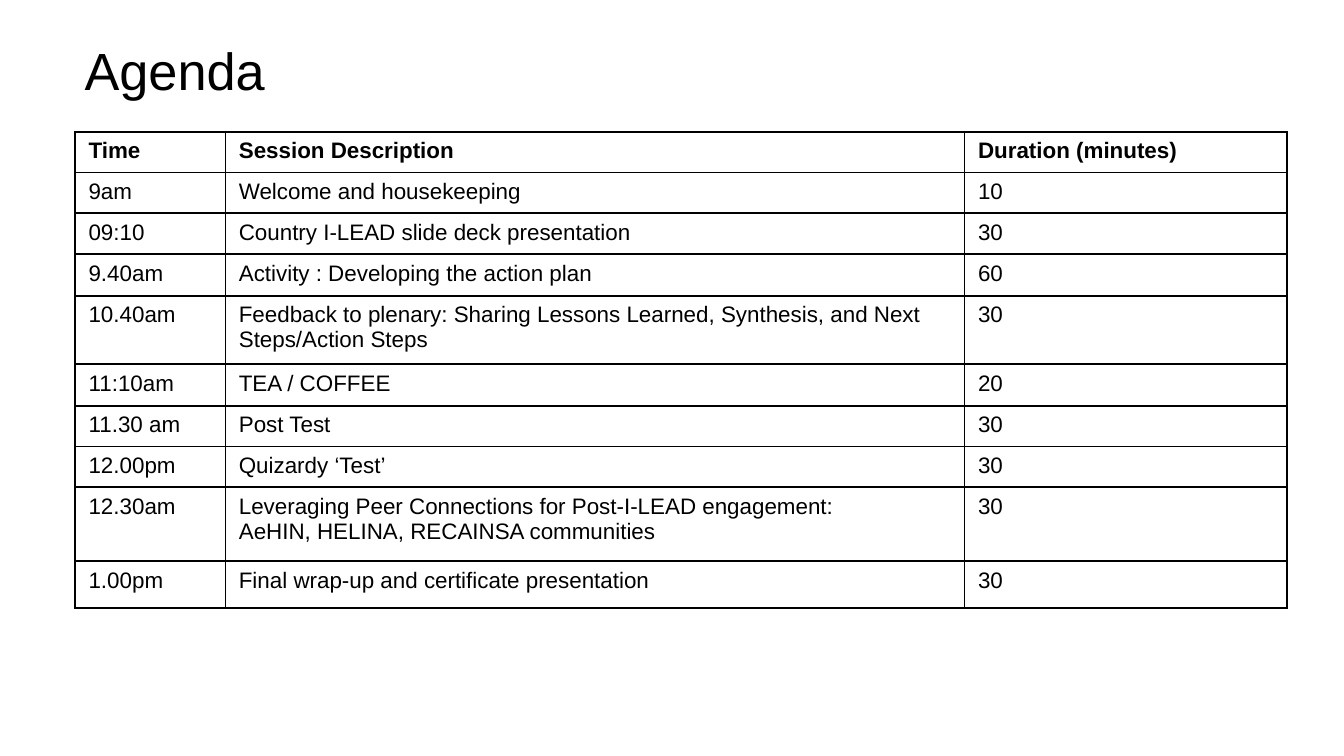
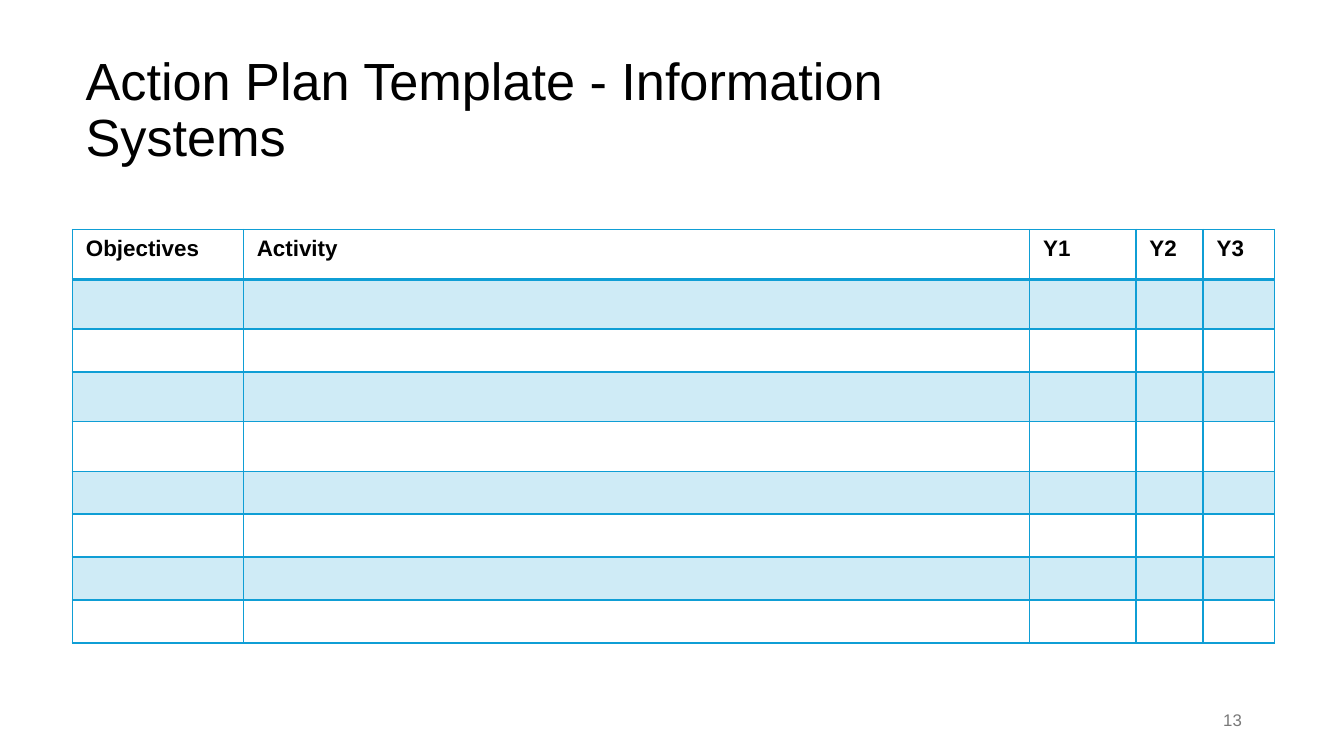
from dataclasses import dataclass
from typing import NamedTuple

from lxml import etree
from pptx import Presentation
from pptx.dml.color import RGBColor
from pptx.enum.text import MSO_ANCHOR, PP_ALIGN
from pptx.oxml.ns import qn
from pptx.util import Cm, Pt

TOP, MIDDLE, BOTTOM = MSO_ANCHOR.TOP, MSO_ANCHOR.MIDDLE, MSO_ANCHOR.BOTTOM
LEFT, RIGHT = PP_ALIGN.LEFT, PP_ALIGN.RIGHT


@dataclass(frozen=True)
class Theme:
    font: str = "Arial"
    ink: str = "000000"
    muted: str = "797979"
    accent: str = "0F9ED5"
    band_opacity: int = 20
    title_size: int = 28
    table_size: int = 12
    number_size: int = 9
    rule: int = 1
    header_rule: int = 2


class Box(NamedTuple):
    left: float
    top: float
    width: float
    height: float


THEME = Theme()
WIDE_INSETS = (0.25, 0.13)
TIGHT_INSETS = (0.18, 0.1)

AGENDA = [
    ("Time", "Session Description", "Duration (minutes)"),
    ("9am", "Welcome and housekeeping", "10"),
    ("09:10", "Country I-LEAD slide deck presentation", "30"),
    ("9.40am", "Activity : Developing the action plan", "60"),
    ("10.40am", "Feedback to plenary: Sharing Lessons Learned, Synthesis, "
                "and Next Steps/Action Steps", "30"),
    ("11:10am", "TEA / COFFEE", "20"),
    ("11.30 am", "Post Test", "30"),
    ("12.00pm", "Quizardy ‘Test’", "30"),
    ("12.30am", "Leveraging Peer Connections for Post-I-LEAD engagement: \n"
                "AeHIN, HELINA, RECAINSA communities", "30"),
    ("1.00pm", "Final wrap-up and certificate presentation", "30"),
]
AGENDA_COLUMNS = (2.84, 13.97, 6.09)
AGENDA_ROWS = (0.77, 0.77, 0.77, 0.79, 1.29, 0.79, 0.77, 0.77, 1.4, 0.88)

PLAN_HEADER = ("Objectives", "Activity", "Y1", "Y2", "Y3")
PLAN_COLUMNS = (3.23, 14.86, 2.01, 1.27, 1.35)
PLAN_ROWS = (0.94, 0.94, 0.81, 0.94, 0.94, 0.81, 0.81, 0.81, 0.81)


def write(frame, text, size, color=THEME.ink, bold=False, align=LEFT, spacing=None):
    paragraph = frame.paragraphs[0]
    paragraph.alignment = align
    if spacing:
        paragraph.line_spacing = spacing
    if not text:
        etree.SubElement(paragraph._p, qn("a:endParaRPr"), sz=str(size * 100))
        return
    paragraph.text = text
    for run in paragraph.runs:
        run.font.name = THEME.font
        run.font.size = Pt(size)
        run.font.bold = bold
        run.font.color.rgb = RGBColor.from_string(color)


def add_text(slide, box, text, size, anchor=MIDDLE, insets=TIGHT_INSETS, **style):
    frame = slide.shapes.add_textbox(*map(Cm, box)).text_frame
    frame.word_wrap = True
    frame.vertical_anchor = anchor
    frame.margin_left = frame.margin_right = Cm(insets[0])
    frame.margin_top = frame.margin_bottom = Cm(insets[1])
    write(frame, text, size, **style)


def add_title(slide, box, text, **layout):
    add_text(slide, box, text, THEME.title_size, spacing=0.9, **layout)


def add_page_number(slide, box, number):
    add_text(slide, box, number, THEME.number_size, color=THEME.muted, align=RIGHT)


def draw_borders(cell, color, top, bottom):
    properties = cell._tc.get_or_add_tcPr()
    widths = {"L": THEME.rule, "R": THEME.rule, "T": top, "B": bottom}
    for side, width in widths.items():
        border = etree.SubElement(properties, qn(f"a:ln{side}"), w=str(Pt(width)))
        solid = etree.SubElement(border, qn("a:solidFill"))
        etree.SubElement(solid, qn("a:srgbClr"), val=color)


def fill_band(cell):
    cell.fill.solid()
    cell.fill.fore_color.rgb = RGBColor.from_string(THEME.accent)
    tint = cell._tc.tcPr.find(qn("a:solidFill")).find(qn("a:srgbClr"))
    etree.SubElement(tint, qn("a:alpha"), val=str(THEME.band_opacity * 1000))


def add_grid(slide, left, top, widths, heights, content, color,
             header_rule=THEME.rule, banded=False):
    box = Box(left, top, sum(widths), sum(heights))
    table = slide.shapes.add_table(len(heights), len(widths), *map(Cm, box)).table
    table.first_row = table.horz_banding = False
    for column, width in zip(table.columns, widths):
        column.width = Cm(width)
    for index, (row, height) in enumerate(zip(table.rows, heights)):
        row.height = Cm(height)
        for cell, text in zip(row.cells, content[index]):
            cell.vertical_anchor = TOP
            write(cell.text_frame, text, THEME.table_size, bold=index == 0)
            draw_borders(cell, color,
                         top=header_rule if index == 1 else THEME.rule,
                         bottom=header_rule if index == 0 else THEME.rule)
            if banded and index % 2:
                fill_band(cell)
            else:
                cell.fill.background()


def agenda_slide(slide):
    left = 1.42
    add_title(slide, Box(left, 0.33, 10.03, 1.7), "Agenda", anchor=BOTTOM)
    add_grid(slide, left, 2.49, AGENDA_COLUMNS, AGENDA_ROWS, AGENDA, THEME.ink)


def action_plan_slide(slide):
    left = 1.37
    blank_row = ("",) * len(PLAN_HEADER)
    content = [PLAN_HEADER] + [blank_row] * (len(PLAN_ROWS) - 1)
    add_page_number(slide, Box(17.93, 13.23, 5.72, 0.76), "13")
    add_title(slide, Box(left, 0.48, 16.84, 3.25),
              "Action Plan Template - Information Systems", insets=WIDE_INSETS)
    add_grid(slide, left, 4.34, PLAN_COLUMNS, PLAN_ROWS, content, THEME.accent,
             header_rule=THEME.header_rule, banded=True)


def main():
    deck = Presentation()
    deck.slide_width, deck.slide_height = Cm(25.4), Cm(14.29)
    blank = deck.slide_layouts[6]
    for build in (agenda_slide, action_plan_slide):
        build(deck.slides.add_slide(blank))
    deck.save("out.pptx")


if __name__ == "__main__":
    main()
